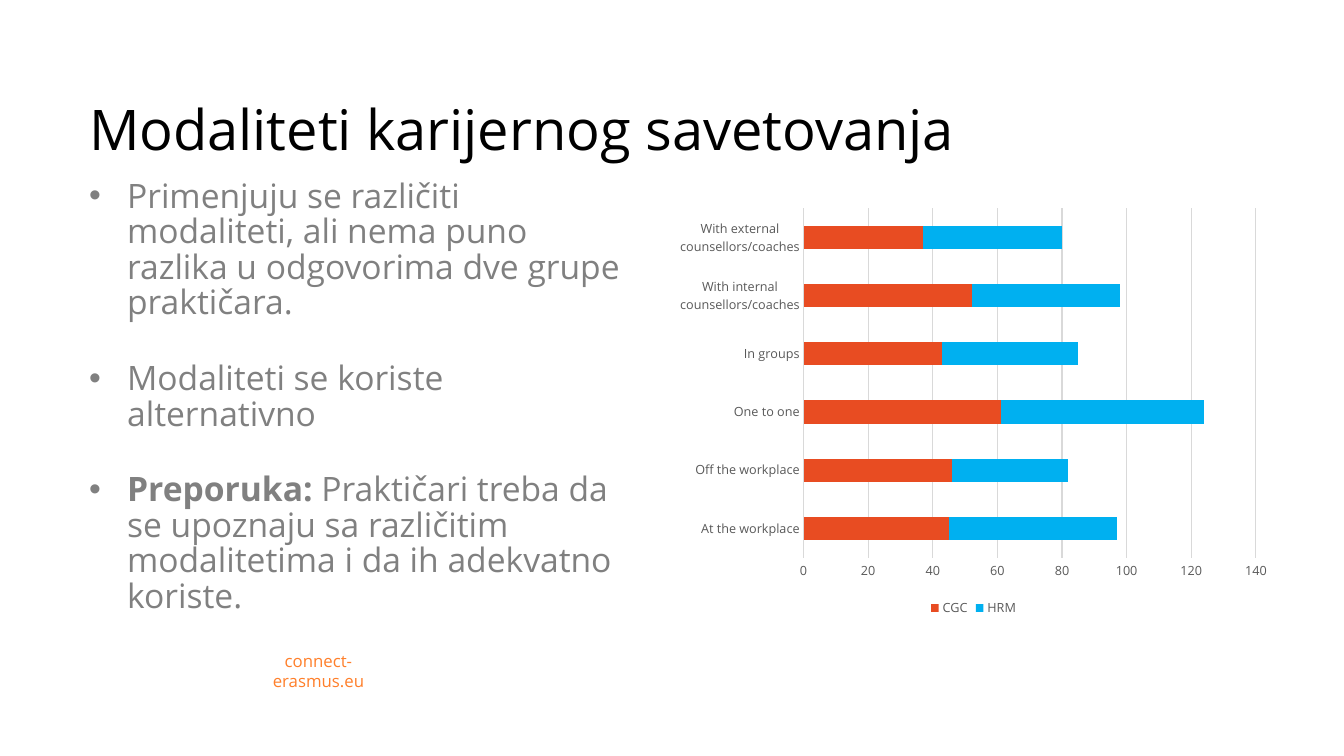
from dataclasses import dataclass

from pptx import Presentation
from pptx.chart.data import CategoryChartData
from pptx.dml.color import RGBColor
from pptx.enum.chart import XL_CHART_TYPE as ChartType
from pptx.enum.chart import XL_LEGEND_POSITION as LegendPosition
from pptx.enum.chart import XL_TICK_MARK as TickMark
from pptx.enum.text import MSO_ANCHOR as Anchor
from pptx.enum.text import MSO_AUTO_SIZE as AutoSize
from pptx.enum.text import PP_ALIGN as Align
from pptx.util import Emu, Pt

EMU_PER_PX = 914400 / 100.8
FONT = "Open Sans"
BLACK = RGBColor(0x00, 0x00, 0x00)
GREY = RGBColor(0x80, 0x80, 0x80)
LABEL_GREY = RGBColor(0x59, 0x59, 0x59)
LINE_GREY = RGBColor(0xD9, 0xD9, 0xD9)
ORANGE = RGBColor(0xFF, 0x7F, 0x2A)
RED = RGBColor(0xE8, 0x4C, 0x22)
BLUE = RGBColor(0x00, 0xB0, 0xF0)


@dataclass(frozen=True)
class Box:
    left: int
    top: int
    width: int
    height: int

    def emu(self) -> tuple[Emu, ...]:
        return tuple(px(n) for n in (self.left, self.top, self.width, self.height))


@dataclass(frozen=True)
class Bullet:
    text: str
    lead: str = ""


@dataclass(frozen=True)
class Group:
    name: str
    values: tuple[int, ...]
    color: RGBColor


TITLE_BOX = Box(79, 7, 1178, 161)
BODY_BOX = Box(79, 175, 552, 481)
SITE_BOX = Box(230, 656, 177, 30)
CHART_BOX = Box(668, 200, 611, 421)
HANGING = 38

BULLETS = (
    Bullet("Primenjuju se različiti modaliteti, ali nema puno razlika "
           "u odgovorima dve grupe praktičara."),
    Bullet("Modaliteti se koriste alternativno"),
    Bullet("Praktičari treba da se upoznaju sa različitim modalitetima "
           "i da ih adekvatno koriste.", lead="Preporuka: "),
)
MODALITIES = (
    "At the workplace",
    "Off the workplace",
    "One to one",
    "In groups",
    "With internal counsellors/coaches",
    "With external counsellors/coaches",
)
GROUPS = (
    Group("CGC", (45, 46, 61, 43, 52, 37), RED),
    Group("HRM", (52, 36, 63, 42, 46, 43), BLUE),
)


def px(length: int) -> Emu:
    return Emu(round(length * EMU_PER_PX))


def place(shape, box: Box) -> None:
    shape.left, shape.top, shape.width, shape.height = box.emu()


def style(font, size: float, color: RGBColor) -> None:
    font.name = FONT
    font.size = Pt(size)
    font.color.rgb = color


def add_title(slide) -> None:
    title = slide.shapes.title
    place(title, TITLE_BOX)
    frame = title.text_frame
    frame.text = "Modaliteti karijernog savetovanja"
    frame.auto_size = AutoSize.NONE
    frame.vertical_anchor = Anchor.BOTTOM
    heading = frame.paragraphs[0]
    heading.alignment = Align.LEFT
    heading.line_spacing = 0.9
    style(heading.runs[0].font, 40, BLACK)


def add_bullets(slide) -> None:
    body = slide.placeholders[1]
    place(body, BODY_BOX)
    frame = body.text_frame
    frame.auto_size = AutoSize.NONE
    for index, bullet in enumerate(BULLETS):
        item = frame.add_paragraph() if index else frame.paragraphs[0]
        properties = item._p.get_or_add_pPr()
        properties.set("marL", str(px(HANGING)))
        properties.set("indent", str(-px(HANGING)))
        item.line_spacing = 0.88
        item.space_before = Pt(28.8 if index else 0)
        for text in filter(None, (bullet.lead, bullet.text)):
            run = item.add_run()
            run.text = text
            style(run.font, 24, GREY)
            run.font.bold = text == bullet.lead


def add_site(slide) -> None:
    frame = slide.shapes.add_textbox(*SITE_BOX.emu()).text_frame
    frame.word_wrap = True
    frame.vertical_anchor = Anchor.MIDDLE
    frame.text = "connect-erasmus.eu"
    address = frame.paragraphs[0]
    address.alignment = Align.CENTER
    style(address.runs[0].font, 12, ORANGE)


def add_modality_chart(slide) -> None:
    data = CategoryChartData(number_format="###0")
    data.categories = MODALITIES
    for group in GROUPS:
        data.add_series(group.name, group.values)
    chart = slide.shapes.add_chart(
        ChartType.BAR_STACKED, *CHART_BOX.emu(), data).chart
    style(chart.font, 10, BLACK)
    chart.has_title = False
    chart.has_legend = True
    chart.legend.position = LegendPosition.BOTTOM
    chart.legend.include_in_layout = False
    style(chart.legend.font, 9, LABEL_GREY)

    for axis in (chart.category_axis, chart.value_axis):
        axis.major_tick_mark = TickMark.NONE
        axis.minor_tick_mark = TickMark.NONE
        style(axis.tick_labels.font, 9, LABEL_GREY)
    chart.value_axis.has_major_gridlines = True
    chart.value_axis.format.line.fill.background()
    for line in (chart.category_axis.format.line,
                 chart.value_axis.major_gridlines.format.line):
        line.color.rgb = LINE_GREY
        line.width = Pt(0.75)

    plot = chart.plots[0]
    plot.vary_by_categories = False
    plot.gap_width = 150
    plot.overlap = 100
    for series, group in zip(plot.series, GROUPS):
        series.format.fill.solid()
        series.format.fill.fore_color.rgb = group.color


def main() -> None:
    deck = Presentation()
    deck.slide_width = px(1344)
    deck.slide_height = px(756)
    slide = deck.slides.add_slide(deck.slide_layouts[1])
    add_title(slide)
    add_bullets(slide)
    add_site(slide)
    add_modality_chart(slide)
    deck.save("out.pptx")


if __name__ == "__main__":
    main()
